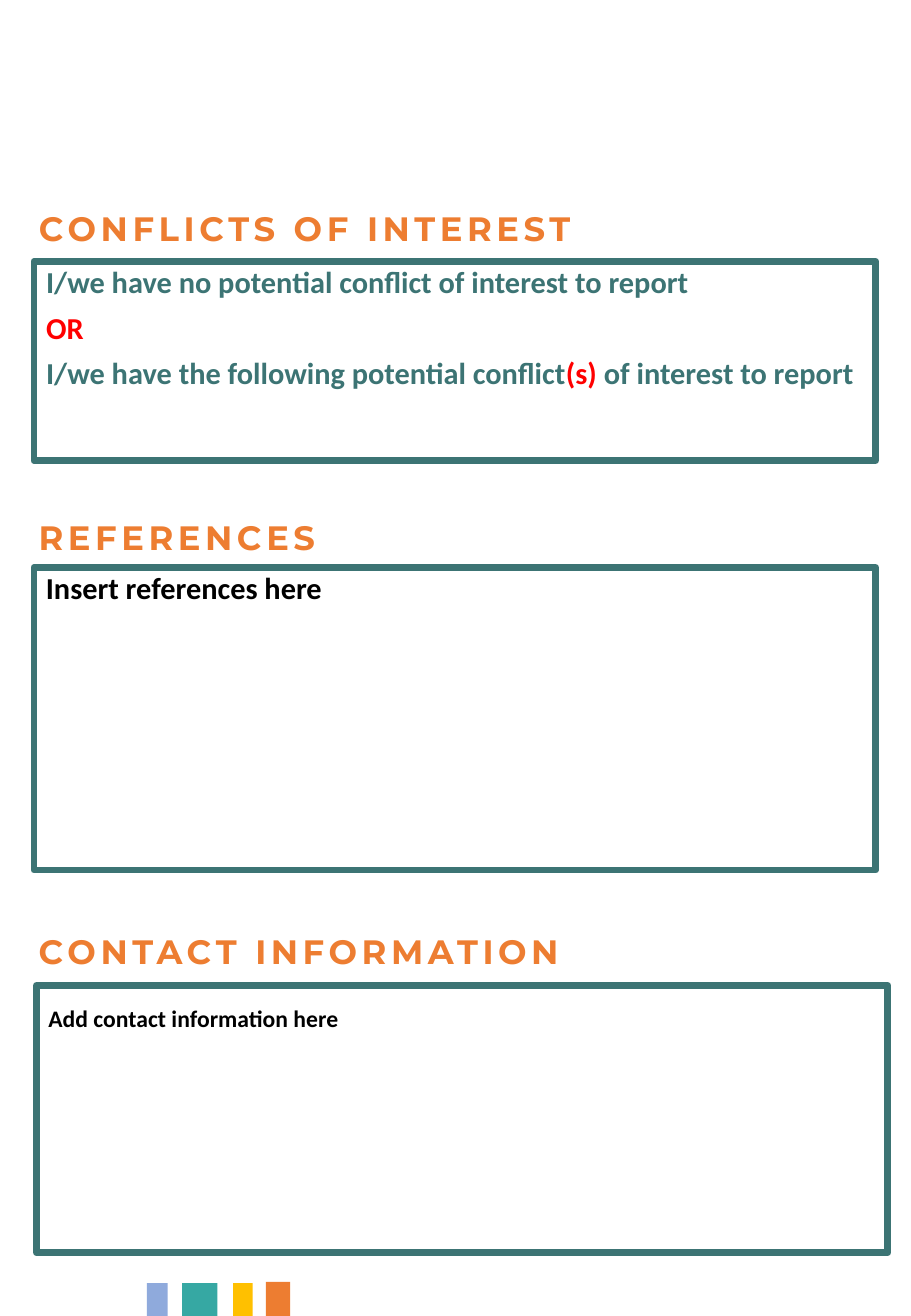
from pptx import Presentation
from pptx.dml.color import RGBColor
from pptx.enum.shapes import MSO_SHAPE
from pptx.enum.text import MSO_ANCHOR, MSO_AUTO_SIZE, PP_ALIGN
from pptx.oxml.xmlchemy import OxmlElement
from pptx.util import Inches, Pt

RECTANGLE = MSO_SHAPE.RECTANGLE
TOP, MIDDLE = MSO_ANCHOR.TOP, MSO_ANCHOR.MIDDLE
NO_FIT = MSO_AUTO_SIZE.NONE
LEFT = PP_ALIGN.LEFT

COLORS = {
    "orange": "ED7D31", "yellow": "FFC000", "teal": "36A8A3", "blue": "8FAADC",
    "frame": "3C7474", "red": "FF0000", "black": "000000",
}
PAGE_WIDTH, PAGE_HEIGHT = 7.5, 10.83
HEADING_LEFT, HEADING_HEIGHT = 0.22, 0.44

# Each paragraph is a list of (text, color) spans
CONFLICT_LINES = [
    [("I/we have no potential conflict of interest to report", "frame")],
    [("OR", "red")],
    [("I/we have the following potential conflict", "frame"), ("(s) ", "red"),
     ("of interest to report", "frame")],
]
REFERENCE_LINES = [[("Insert references here", "black")]]
CONTACT_LINES = [[("Add contact information here", "black")]]

# Footer bars: left, top, width, color
FOOTER_BARS = [
    (1.21, 10.56, 0.17, "blue"), (1.5, 10.56, 0.29, "teal"),
    (1.92, 10.56, 0.16, "yellow"), (2.19, 10.55, 0.2, "orange"),
]


def rgb(name):
    return RGBColor.from_string(COLORS[name])


def place(shape, left, top, width, height):
    shape.left, shape.top = Inches(left), Inches(top)
    shape.width, shape.height = Inches(width), Inches(height)


def prepare_frame(shape, anchor, top_inset=0.05):
    frame = shape.text_frame
    frame.word_wrap = True
    frame.auto_size = NO_FIT
    frame.vertical_anchor = anchor
    frame.margin_left = frame.margin_right = Inches(0.1)
    frame.margin_top, frame.margin_bottom = Inches(top_inset), Inches(0.05)
    return frame


def write_heading(shape, top, width, text):
    """Letter-spaced section heading."""
    place(shape, HEADING_LEFT, top, width, HEADING_HEIGHT)
    para = prepare_frame(shape, MIDDLE).paragraphs[0]
    para.alignment = LEFT
    span = para.add_run()
    span.text = text
    span.font._element.set("spc", "270")
    para.font.name, para.font.size, para.font.bold = "Montserrat", Pt(20), True
    para.font.color.rgb = rgb("orange")


def write_box(shape, box, lines, size=18, top_inset=0.05):
    """Outlined box with bold lines of text."""
    place(shape, *box)
    shape.fill.background()
    shape.line.color.rgb = rgb("frame")
    shape.line.width = Pt(4)
    frame = prepare_frame(shape, TOP, top_inset)
    for number, spans in enumerate(lines):
        para = frame.add_paragraph() if number else frame.paragraphs[0]
        para.alignment = LEFT
        para.line_spacing = 0.9
        para.space_before = Pt(7.5 if number else 0)
        properties = para._p.get_or_add_pPr()
        properties.set("marL", "0")
        properties.set("indent", "0")
        properties.append(OxmlElement("a:buNone"))
        para.font.name, para.font.size, para.font.bold = "Calibri", Pt(size), True
        for text, color in spans:
            span = para.add_run()
            span.text = text
            span.font.color.rgb = rgb(color)


def add_section(page, title, heading_top, heading_width, box, lines, **style):
    """Heading with its outlined box below."""
    heading = page.shapes.add_textbox(0, 0, 0, 0)
    write_heading(heading, heading_top, heading_width, title)
    panel = page.shapes.add_shape(RECTANGLE, 0, 0, 0, 0)
    panel.shadow.inherit = False
    write_box(panel, box, lines, **style)


def add_footer(page):
    """Colored bars that run to the bottom edge."""
    for left, top, width, color in FOOTER_BARS:
        bar = page.shapes.add_shape(RECTANGLE, 0, 0, 0, 0)
        place(bar, left, top, width, PAGE_HEIGHT - top)
        bar.shadow.inherit = False
        bar.fill.solid()
        bar.fill.fore_color.rgb = rgb(color)
        bar.line.fill.background()


def main():
    deck = Presentation()
    deck.slide_width, deck.slide_height = Inches(PAGE_WIDTH), Inches(PAGE_HEIGHT)
    page = deck.slides.add_slide(deck.slide_layouts[1])

    add_footer(page)
    # Conflicts of interest, in the title and body placeholders
    write_heading(page.shapes.title, 1.66, 5.2, "CONFLICTS OF INTEREST")
    write_box(page.placeholders[1], (0.28, 2.15, 6.93, 1.64), CONFLICT_LINES)
    # Remaining sections
    add_section(page, "REFERENCES", 4.2, 3.76, (0.28, 4.67, 6.93, 2.49), REFERENCE_LINES)
    add_section(page, "CONTACT INFORMATION", 7.61, 5.05, (0.3, 8.11, 7.01, 2.2),
                CONTACT_LINES, size=14, top_inset=0.18)

    deck.save("out.pptx")


if __name__ == "__main__":
    main()
